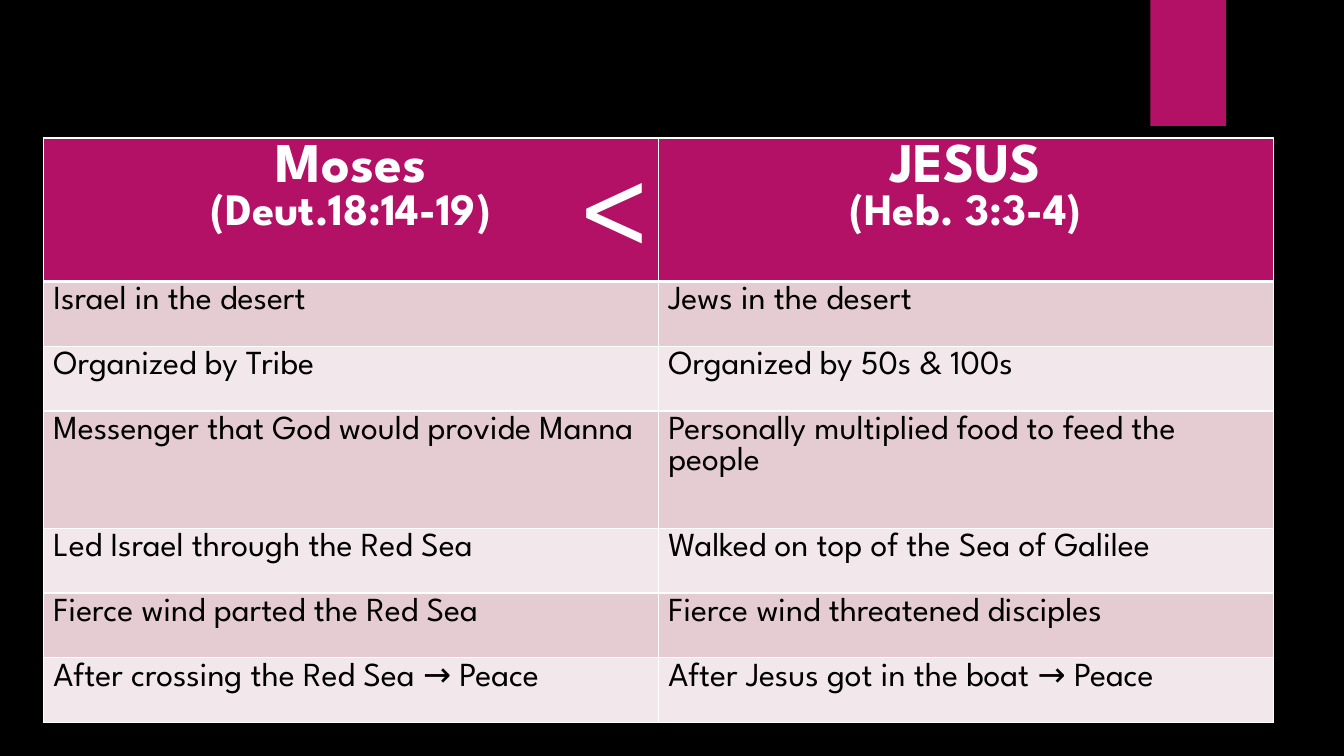
from dataclasses import dataclass

from lxml import etree
from pptx import Presentation
from pptx.dml.color import RGBColor
from pptx.enum.shapes import MSO_SHAPE
from pptx.enum.text import PP_ALIGN
from pptx.oxml.ns import qn
from pptx.util import Pt

RECT = MSO_SHAPE.RECTANGLE
LEFT, CENTER = PP_ALIGN.LEFT, PP_ALIGN.CENTER


@dataclass(frozen=True)
class Theme:
    """Colours, font and type sizes of the slide."""
    font: str = "League Spartan"
    back: str = "000000"
    accent: str = "B31166"
    light: str = "FFFFFF"
    dark: str = "000000"
    bands: tuple = ("E5CCD3", "F2E7EA")
    title: int = 40
    verse: int = 32
    body: int = 24
    sign: int = 96


class Deck:
    """Draws elements on the current slide in one theme."""

    def __init__(self, prs, theme):
        self.theme = theme
        self.s = prs.slides.add_slide(prs.slide_layouts[6])
        self.paint(self.s.background.fill, theme.back)

    def paint(self, fill, color):
        """Make a fill solid."""
        fill.solid()
        fill.fore_color.rgb = RGBColor.from_string(color)

    def set_text(self, tf, lines, sizes, color, align=LEFT, bold=False):
        """Set one paragraph per line, each in its own size."""
        tf.text = "\n".join(lines)
        for p, size in zip(tf.paragraphs, sizes):
            p.alignment = align
            for r in p.runs:
                r.font.name = self.theme.font
                r.font.size = Pt(size)
                r.font.bold = bold
                r.font.color.rgb = RGBColor.from_string(color)

    def block(self, x, y, w, h):
        """Add an accent rectangle."""
        sp = self.s.shapes.add_shape(RECT, Pt(x), Pt(y), Pt(w), Pt(h))
        sp.shadow.inherit = False
        self.paint(sp.fill, self.theme.accent)
        sp.line.fill.background()

    def label(self, x, y, w, h, text, size):
        """Add a centred line of light text."""
        tf = self.s.shapes.add_textbox(Pt(x), Pt(y), Pt(w), Pt(h)).text_frame
        tf.word_wrap = False
        self.set_text(tf, [text], [size], self.theme.light, CENTER)

    def border(self, cell, edges):
        """Draw light cell edges from a map of side to width."""
        tcPr = cell._tc.get_or_add_tcPr()
        for side, width in edges.items():
            ln = etree.SubElement(tcPr, qn(f"a:ln{side}"), w=str(Pt(width)))
            fill = etree.SubElement(ln, qn("a:solidFill"))
            etree.SubElement(fill, qn("a:srgbClr"), val=self.theme.light)

    def table(self, x, y, w, heights, head, rows):
        """Add a banded table with two-line column headings."""
        t = self.theme
        cols = len(head)
        frame = self.s.shapes.add_table(
            len(heights), cols, Pt(x), Pt(y), Pt(w), Pt(sum(heights)))
        table = frame.table
        for col in table.columns:
            col.width = Pt(w / cols)
        for i, (height, texts) in enumerate(zip(heights, [head, *rows])):
            table.rows[i].height = Pt(height)
            for cell, text in zip(table.rows[i].cells, texts):
                self.border(cell, {"L": 1, "R": 1, "T": 3 if i == 1 else 1,
                                   "B": 1 if i else 3})
                if i:
                    self.paint(cell.fill, t.bands[(i - 1) % 2])
                    self.set_text(cell.text_frame, [text], [t.body], t.dark)
                else:
                    self.paint(cell.fill, t.accent)
                    self.set_text(cell.text_frame, text, [t.title, t.verse],
                                  t.light, CENTER, True)


HEAD = [("Moses", "(Deut.18:14-19)"), ("JESUS", "(Heb. 3:3-4)")]
ROWS = [
    ("Israel in the desert", "Jews in the desert"),
    ("Organized by Tribe", "Organized by 50s & 100s"),
    ("Messenger that God would provide Manna",
     "Personally multiplied food to feed the people"),
    ("Led Israel through the Red Sea", "Walked on top of the Sea of Galilee"),
    ("Fierce wind parted the Red Sea", "Fierce wind threatened disciples"),
    ("After crossing the Red Sea → Peace",
     "After Jesus got in the boat → Peace"),
]
HEIGHTS = [102.4, 46.3, 46.3, 83.8, 46.3, 46.3, 46.3]


def main():
    """Build and save the slide."""
    prs = Presentation()
    prs.slide_width, prs.slide_height = Pt(960), Pt(540)
    theme = Theme()
    deck = Deck(prs, theme)
    deck.block(821.8, 0, 54, 90)
    deck.table(31, 98.6, 878.4, HEIGHTS, HEAD, ROWS)
    deck.label(407.5, 85, 62.6, 123.8, "<", theme.sign)
    prs.save("out.pptx")


if __name__ == "__main__":
    main()
